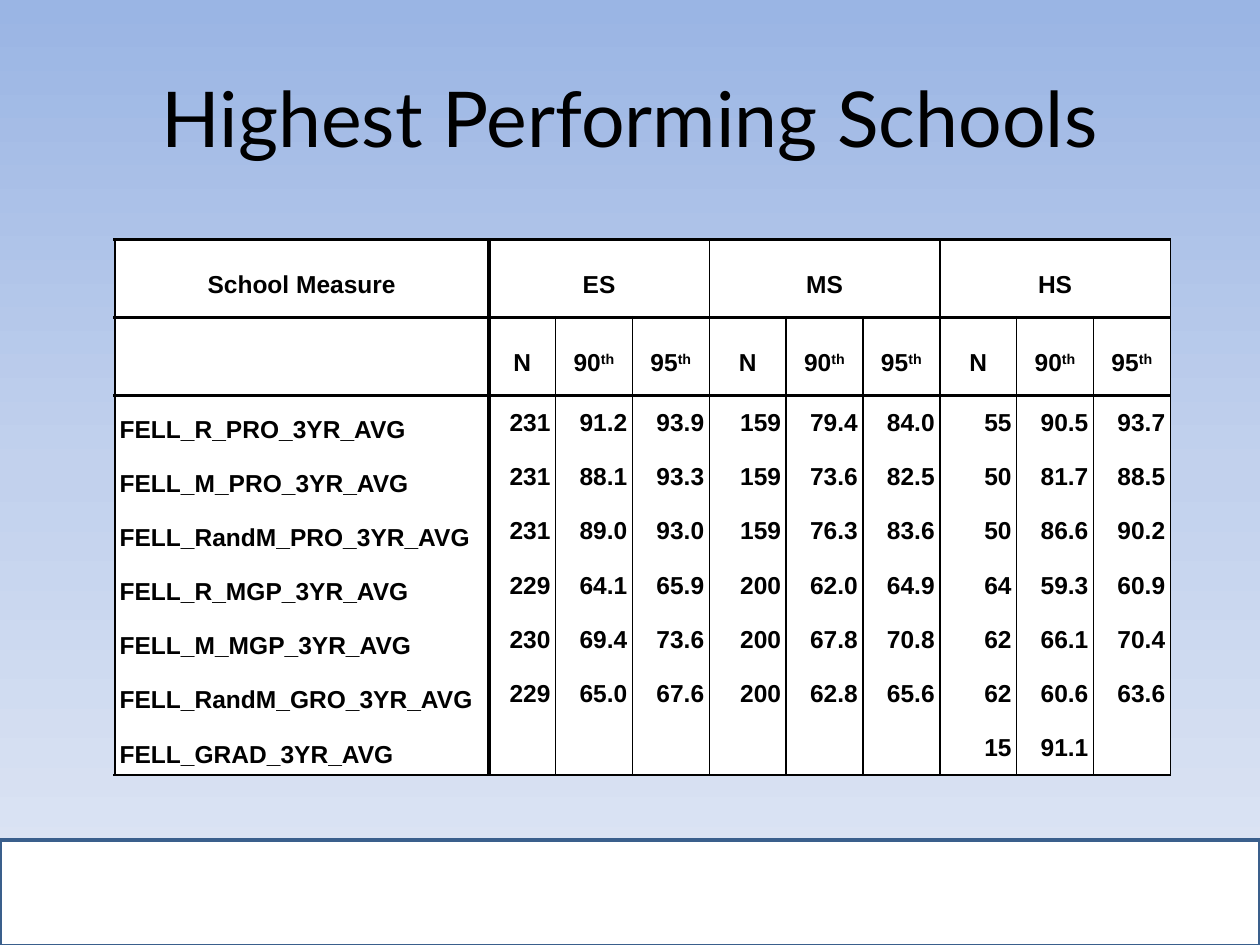
from copy import deepcopy

from lxml.etree import SubElement
from pptx import Presentation
from pptx.dml.color import RGBColor
from pptx.enum.shapes import MSO_SHAPE
from pptx.enum.text import MSO_ANCHOR, PP_ALIGN
from pptx.oxml.ns import qn
from pptx.util import Inches, Pt

WIDTH, HEIGHT = Inches(10), Inches(7.5)
BLACK, WHITE, BAND_EDGE = "000000", "FFFFFF", "3A5F8C"
SKY = [(0, "9AB5E4"), (0.5, "C2D1ED"), (1, "E1E8F5")]
NO_GRID_STYLE = "{2D5ABB26-0587-4C30-8999-92F81FD0307C}"

LEVELS = ["ES", "MS", "HS"]
STATISTICS = ["N", "90th", "95th"]
MEASURES = [
    ("FELL_R_PRO_3YR_AVG", "231 91.2 93.9 159 79.4 84.0 55 90.5 93.7"),
    ("FELL_M_PRO_3YR_AVG", "231 88.1 93.3 159 73.6 82.5 50 81.7 88.5"),
    ("FELL_RandM_PRO_3YR_AVG", "231 89.0 93.0 159 76.3 83.6 50 86.6 90.2"),
    ("FELL_R_MGP_3YR_AVG", "229 64.1 65.9 200 62.0 64.9 64 59.3 60.9"),
    ("FELL_M_MGP_3YR_AVG", "230 69.4 73.6 200 67.8 70.8 62 66.1 70.4"),
    ("FELL_RandM_GRO_3YR_AVG", "229 65.0 67.6 200 62.8 65.6 62 60.6 63.6"),
    ("FELL_GRAD_3YR_AVG", "- - - - - - 15 91.1 -"),
]
HEADER_ROWS = 2
COLUMN_WIDTHS = [2.97, 0.53] + [0.61] * 8
ROW_HEIGHTS = [0.62] * HEADER_ROWS + [0.43] * len(MEASURES)
OUTER, HEAVY, THIN = 1.5, 2.25, 1
COLUMN_EDGES = [OUTER, HEAVY] + [THIN] * 9
ROW_EDGES = [OUTER, HEAVY, HEAVY] + [0] * (len(MEASURES) - 1) + [OUTER]


def color(hex_code):
    return RGBColor.from_string(hex_code)


def paint_background(slide):
    fill = slide.background.fill
    fill.gradient()
    fill.gradient_angle = 270
    stop_list = next(slide.element.iter(qn("a:gsLst")))
    stop_list.append(deepcopy(stop_list[0]))
    for stop, (position, hex_code) in zip(fill.gradient_stops, SKY):
        stop.position = position
        stop.color.rgb = color(hex_code)


def add_footer_band(slide):
    top = 0.889
    band = slide.shapes.add_shape(
        MSO_SHAPE.RECTANGLE, 0, int(HEIGHT * top), WIDTH, int(HEIGHT * 0.112))
    band.shadow.inherit = False
    band.fill.solid()
    band.fill.fore_color.rgb = color(WHITE)
    band.line.color.rgb = color(BAND_EDGE)
    band.line.width = Pt(2)


def style_font(paragraph, name, size, bold=False):
    font = paragraph.font
    font.name, font.size, font.bold = name, Pt(size), bold
    font.color.rgb = color(BLACK)


def add_title(slide, text):
    box = slide.shapes.add_textbox(
        int(WIDTH * 0.05), int(HEIGHT * 0.04), int(WIDTH * 0.9), Inches(1.25))
    frame = box.text_frame
    frame.word_wrap = True
    frame.vertical_anchor = MSO_ANCHOR.MIDDLE
    heading = frame.paragraphs[0]
    heading.text = text
    heading.alignment = PP_ALIGN.CENTER
    style_font(heading, "Lato", 44)


def draw_borders(cell, weights):
    """Draw the left, right, top and bottom edges; a weight of 0 is no line."""
    properties = cell._tc.get_or_add_tcPr()
    for side, weight in zip("LRTB", weights):
        edge = SubElement(properties, qn(f"a:ln{side}"), w=str(Pt(weight)))
        if weight:
            ink = SubElement(edge, qn("a:solidFill"))
            SubElement(ink, qn("a:srgbClr"), val=BLACK)
        else:
            SubElement(edge, qn("a:noFill"))


def write_cell(cell, text, alignment, anchor, indent):
    cell.margin_left = cell.margin_right = cell.margin_top = cell.margin_bottom = 0
    cell.vertical_anchor = anchor
    paragraph = cell.text_frame.paragraphs[0]
    paragraph.alignment = alignment
    paragraph.line_spacing = 1.5
    for side in ("marL", "marR"):
        paragraph._p.get_or_add_pPr().set(side, str(Inches(indent)))
    style_font(paragraph, "Arial", 14, bold=True)
    number = text.removesuffix("th")
    if text:
        paragraph.add_run().text = number
    if number != text:
        ordinal = paragraph.add_run()
        ordinal.text = "th"
        ordinal._r.get_or_add_rPr().set("baseline", "30000")


def table_rows():
    yield ["School Measure"] + [text for level in LEVELS for text in (level, "", "")]
    yield [""] + STATISTICS * len(LEVELS)
    for measure, values in MEASURES:
        yield [measure] + [value.strip("-") for value in values.split()]


def cell_layout(row, column):
    """Return the alignment, anchor and side indent for a place in the table."""
    if row < HEADER_ROWS:
        return PP_ALIGN.CENTER, MSO_ANCHOR.MIDDLE, 0.04 if column else 0
    if column == 0:
        return PP_ALIGN.LEFT, MSO_ANCHOR.MIDDLE, 0.04
    return PP_ALIGN.RIGHT, MSO_ANCHOR.TOP, 0.04


def add_score_table(slide):
    table = slide.shapes.add_table(
        len(ROW_HEIGHTS), len(COLUMN_WIDTHS), Inches(0.91), Inches(1.9),
        Inches(sum(COLUMN_WIDTHS)), Inches(sum(ROW_HEIGHTS))).table
    table.first_row = table.horz_banding = False
    next(table._tbl.iter(qn("a:tableStyleId"))).text = NO_GRID_STYLE
    for column, width in zip(table.columns, COLUMN_WIDTHS):
        column.width = Inches(width)
    for row, height in zip(table.rows, ROW_HEIGHTS):
        row.height = Inches(height)
    span = len(STATISTICS)
    for first in range(1, len(COLUMN_WIDTHS), span):
        table.cell(0, first).merge(table.cell(0, first + span - 1))

    for r, texts in enumerate(table_rows()):
        for c, text in enumerate(texts):
            cell = table.cell(r, c)
            if not cell.is_spanned:
                write_cell(cell, text, *cell_layout(r, c))
                draw_borders(cell, COLUMN_EDGES[c:c + 2] + ROW_EDGES[r:r + 2])
            cell.fill.solid()
            cell.fill.fore_color.rgb = color(WHITE)


def main():
    deck = Presentation()
    deck.slide_width, deck.slide_height = WIDTH, HEIGHT
    slide = deck.slides.add_slide(deck.slide_layouts[6])
    paint_background(slide)
    add_footer_band(slide)
    add_title(slide, "Highest Performing Schools")
    add_score_table(slide)
    deck.save("out.pptx")


if __name__ == "__main__":
    main()
